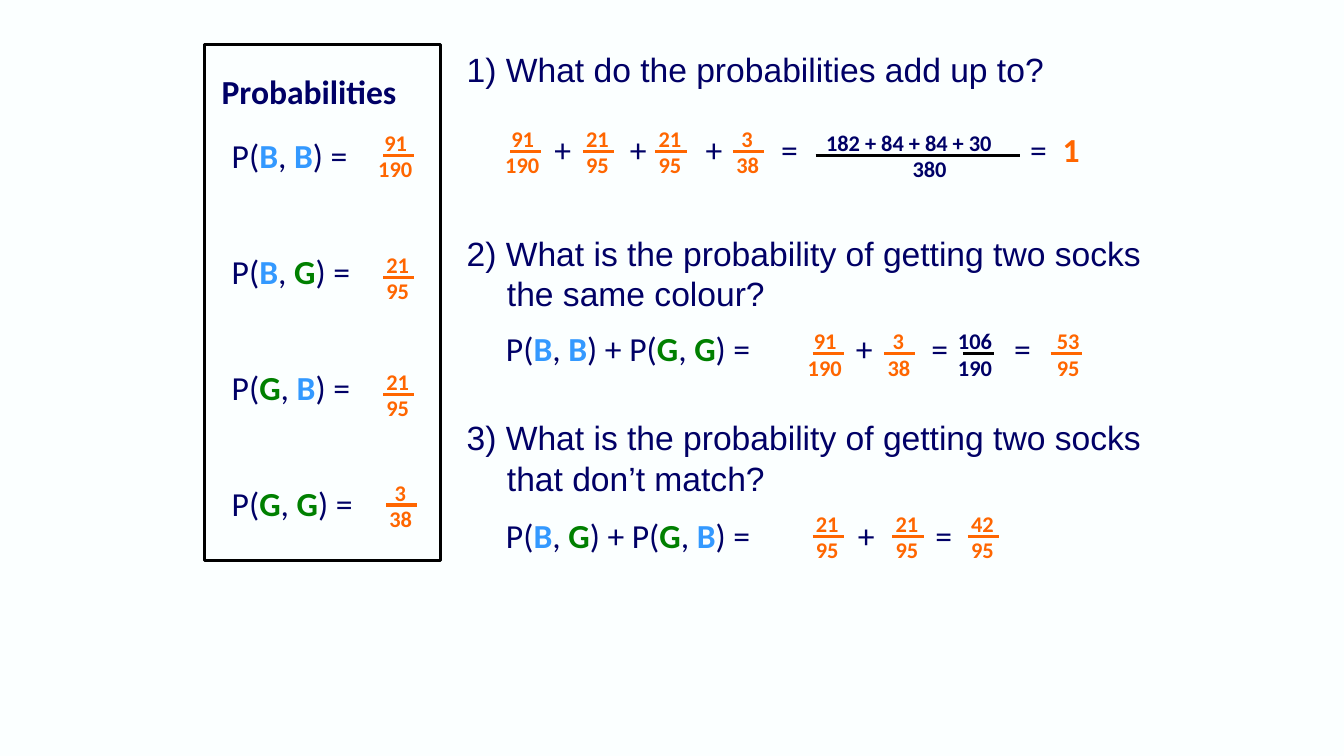
import dataclasses
import itertools

import pptx
import pptx.dml.color
import pptx.enum.shapes
import pptx.enum.text
import pptx.oxml.ns
import pptx.util
from lxml import etree

EMU_PER_PX = 9144


@dataclasses.dataclass(frozen=True)
class Theme:
    """Colours, fonts and type sizes of the slide."""
    paper: str = "FBFFFF"
    ink: str = "000066"
    question: str = "010066"
    answer: str = "FF6600"
    blue_sock: str = "3399FF"
    green_sock: str = "008000"
    rule: str = "000000"
    math_font: str = "Calibri"
    question_font: str = "Arial"
    body: float = 24
    fraction: float = 16
    line: float = 2.25


THEME = Theme()


def px(length):
    """Turn pixels into EMU."""
    return pptx.util.Emu(length * EMU_PER_PX)


def rgb(code):
    """Turn a hex code into a colour."""
    return pptx.dml.color.RGBColor.from_string(code)


def style(span, color, size=THEME.body, font=THEME.math_font, bold=False):
    """Format one run."""
    span.font.name = font
    span.font.size = pptx.util.Pt(size)
    span.font.bold = bold
    span.font.color.rgb = rgb(color)


def text_box(shapes, box, text, wrap=False, **look):
    """Place a text box with one paragraph and return the paragraph."""
    frame = shapes.add_textbox(*map(px, box)).text_frame
    frame.word_wrap = wrap
    frame.auto_size = pptx.enum.text.MSO_AUTO_SIZE.SHAPE_TO_FIT_TEXT
    para = frame.paragraphs[0]
    if text:
        para.text = text
        style(para.runs[0], **look)
    return para


def event(shapes, box, text):
    """Write an event with each sock letter in its own colour."""
    socks = {"B": THEME.blue_sock, "G": THEME.green_sock}
    para = text_box(shapes, box, "")
    for color, letters in itertools.groupby(text, lambda letter: socks.get(letter, THEME.ink)):
        span = para.add_run()
        span.text = "".join(letters)
        style(span, color, bold=color != THEME.ink)


def fraction(shapes, left, top, value, width=31, color=THEME.answer, bar_color=None, shifts=None):
    """Group a numerator, a bar at left and top, and a denominator."""
    group = shapes.add_group_shape().shapes
    parts = value.split("/")
    shift = -3 if len(parts[1]) == 3 else -1
    for part, offset, move in zip(parts, (-31, -5), shifts or (shift, shift)):
        part_width = 187 if len(part) > 3 else 21 + 11 * len(part)
        part_left = left + (width - part_width) // 2 + move
        para = text_box(group, (part_left, top + offset, part_width, 37), part,
                        color=color, size=THEME.fraction, bold=True)
        para.alignment = pptx.enum.text.PP_ALIGN.CENTER
    bar = group.add_connector(pptx.enum.shapes.MSO_CONNECTOR.STRAIGHT,
                              px(left), px(top), px(left + width), px(top))
    bar.line.color.rgb = rgb(bar_color or color)
    bar.line.width = pptx.util.Pt(THEME.line)
    etree.SubElement(bar._element.spPr, pptx.oxml.ns.qn("a:effectLst"))


def probability_panel(page, box, rows):
    """Draw the framed list of probabilities inside box."""
    left, top, width, height = box
    text_box(page.shapes, (left + 7, top + 21, 196, 50), "Probabilities",
             color=THEME.ink, bold=True)
    frame = page.shapes.add_shape(pptx.enum.shapes.MSO_SHAPE.RECTANGLE, *map(px, box))
    frame.shadow.inherit = False
    frame.fill.background()
    frame.line.color.rgb = rgb(THEME.rule)
    frame.line.width = pptx.util.Pt(THEME.line)
    for index, (name, value, bar_left, bar_drop) in enumerate(rows):
        row_top = top + 85 + 115 * index
        event(page.shapes, (left + 17, row_top, 145, 50), name)
        fraction(page.shapes, left + bar_left, row_top + bar_drop, value)


def question(page, box, text, working_drop, bar_drop, signs, fractions, name=""):
    """Write a question in box and its working on a line below it."""
    left, top, width, height = box
    para = text_box(page.shapes, box, text, wrap=True,
                    color=THEME.question, font=THEME.question_font)
    properties = para._p.get_or_add_pPr()
    properties.set("marL", str(px(40)))
    properties.set("indent", str(px(-40)))
    working_top = top + working_drop
    if name:
        event(page.shapes, (left + 39, working_top, 264, 50), name)
    for sign_left, sign in signs:
        text_box(page.shapes, (left + sign_left, working_top, 37, 51), sign, color=THEME.ink)
    for bar_left, value, *options in fractions:
        fraction(page.shapes, left + bar_left, working_top + bar_drop, value,
                 **(options[0] if options else {}))


def sock_slide(deck):
    """Build the slide with the panel and the three questions."""
    page = deck.slides.add_slide(deck.slide_layouts[6])
    page.background.fill.solid()
    page.background.fill.fore_color.rgb = rgb(THEME.paper)
    probability_panel(page, (203, 44, 234, 512), [
        ("P(B, B) =", "91/190", 177, 25),
        ("P(B, G) =", "21/95", 177, 31),
        ("P(G, B) =", "21/95", 177, 32),
        ("P(G, G) =", "3/38", 180, 27),
    ])
    question(
        page, (453, 44, 685, 50), "1) What do the probabilities add up to?", 79, 27,
        [(87, "+"), (162, "+"), (237, "+"), (312, "="), (559, "=")],
        [(53, "91/190"), (125, "21/95"), (197, "21/95"), (274, "3/38")])
    fraction(page.shapes, 809, 154, "182 + 84 + 84 + 30/380", width=203,
             color=THEME.ink, bar_color=THEME.rule, shifts=(-9, 12))
    text_box(page.shapes, (1044, 123, 37, 50), "1", color=THEME.answer, bold=True)
    question(
        page, (453, 226, 693, 91),
        "2) What is the probability of getting two socks the same colour?", 94, 31,
        [(386, "+"), (461, "="), (543, "=")],
        [(353, "91/190"), (424, "3/38"),
         (502, "106/190", {"color": THEME.ink, "bar_color": THEME.rule}),
         (589, "53/95", {"shifts": (2, 2)})],
        "P(B, B) + P(G, G) =")
    question(
        page, (453, 409, 693, 91),
        "3) What is the probability of getting two socks that don’t match?", 97, 26,
        [(388, "+"), (465, "=")],
        [(353, "21/95"), (432, "21/95"), (507, "42/95")],
        "P(B, G) + P(G, B) =")


def main():
    """Create and save the deck."""
    deck = pptx.Presentation()
    deck.slide_width, deck.slide_height = px(1333), px(750)
    sock_slide(deck)
    deck.save("out.pptx")


if __name__ == "__main__":
    main()
